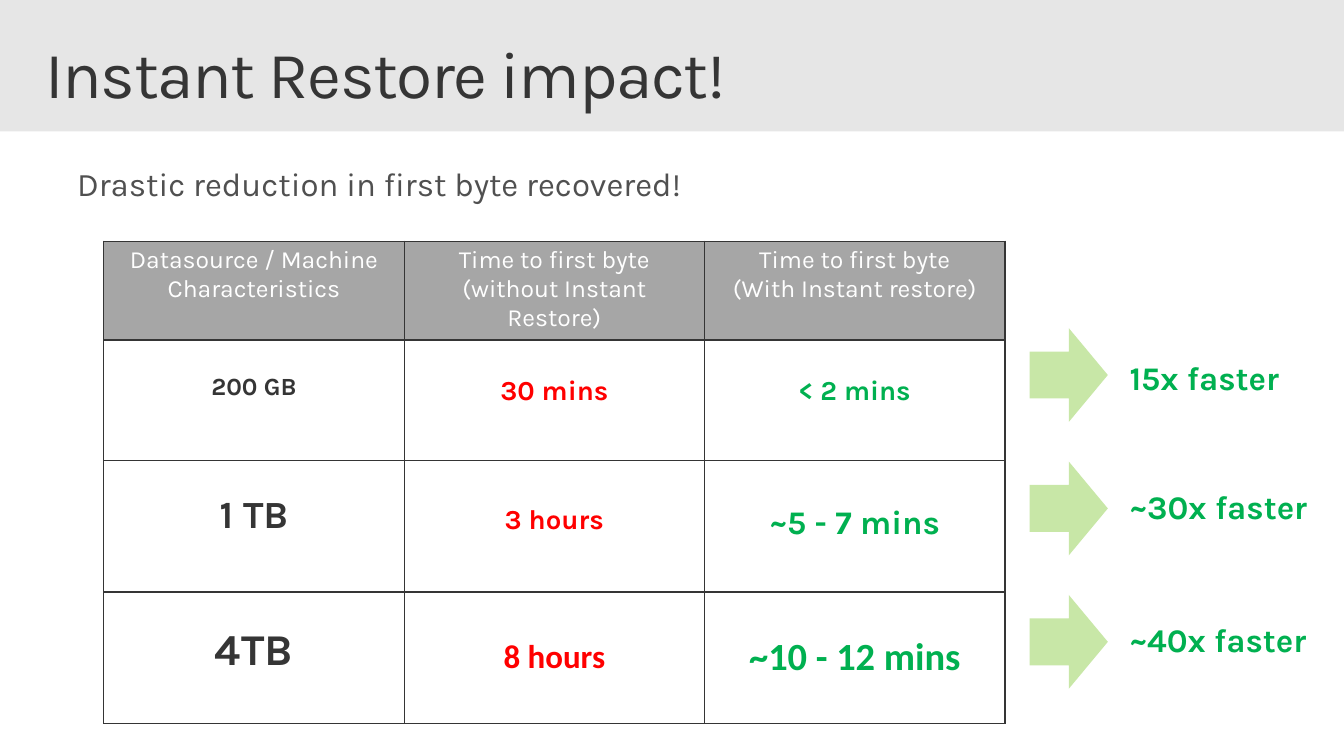
from pptx import Presentation, util as u
from pptx.dml.color import RGBColor
from pptx.enum import shapes, text
from pptx.oxml import parse_xml
from pptx.oxml.ns import nsdecls, qn
from lxml import etree

W, H = 13.6, 7.65
FONT = "Karla"
INK, BODY, WHITE = "353535", "505050", "FFFFFF"
BAND, HEADER = "E6E6E6", "A6A6A6"
RED, GREEN, LIME = "FF0000", "00B050", "92D050"

TABLE_LEFT, TABLE_TOP, COL_W = 1.05, 2.44, 3.04
ROW_HEIGHTS = [1, 1.22, 1.33, 1.33]
HEADINGS = [
    ["Datasource / Machine", "Characteristics"],
    ["Time to first byte", "(without Instant Restore)"],
    ["Time to first byte", "(With Instant restore)"],
]
# Each cell: wording, size, font, lift above the middle of the row
TIMES = [
    [("200 GB", 18, FONT, 0.13), ("30 mins", 20, FONT, 0.09),
     ("< 2 mins", 20, FONT, 0.09)],
    [("1 TB", 28, FONT, 0.11), ("3 hours", 20, FONT, 0.06),
     ("~5 - 7 mins", 24, FONT, 0.03)],
    [("4TB", 32, FONT, 0.07), ("8 hours", 24, "Calibri", 0),
     ("~10 - 12 mins", 28, "Calibri", 0)],
]
COLUMN_COLORS = [INK, RED, GREEN]
ARROW_TOP, ARROW_PITCH = 3.32, 1.35
SPEEDUPS = [("15x faster", 3.5), ("~30x faster", 4.81), ("~40x faster", 6.15)]


def color(hex_code):
    return RGBColor.from_string(hex_code)


def inches(*lengths):
    return [u.Inches(n) for n in lengths]


def write(tf, lines, size=24, fill=INK, font=FONT, bold=False,
          align=text.PP_ALIGN.LEFT, leading=1, spacing=None):
    tf.word_wrap = True
    for i, line in enumerate(lines):
        p = tf.add_paragraph() if i else tf.paragraphs[0]
        p.alignment, p.line_spacing = align, leading
        r = p.add_run()
        r.text = line
        f = r.font
        f.name, f.size, f.bold = font, u.Pt(size), bold
        f.color.rgb = color(fill)
        if spacing is not None:
            r._r.get_or_add_rPr().set("spc", str(spacing))


def add_text(parent, box, line, margins=(0.2, 0.16), **fmt):
    tf = parent.add_textbox(*inches(*box)).text_frame
    tf.margin_left = tf.margin_right = u.Inches(margins[0])
    tf.margin_top = tf.margin_bottom = u.Inches(margins[1])
    write(tf, [line], leading=0.9, **fmt)


def add_block(parent, kind, box, fill, alpha=None):
    sp = parent.add_shape(kind, *inches(*box))
    sp.shadow.inherit = False
    sp.fill.solid()
    sp.fill.fore_color.rgb = color(fill)
    sp.line.fill.background()
    if alpha is not None:
        clr = sp._element.spPr.find(qn("a:solidFill"))[0]
        etree.SubElement(clr, qn("a:alpha")).set("val", str(alpha * 1000))


def style_cell(cell, fill):
    cell.fill.solid()
    cell.fill.fore_color.rgb = color(fill)
    tcPr = cell._tc.get_or_add_tcPr()
    for i, side in enumerate("LRTB"):
        tcPr.insert(i, parse_xml(
            f'<a:ln{side} {nsdecls("a")} w="12700"><a:solidFill>'
            f'<a:srgbClr val="{INK}"/></a:solidFill></a:ln{side}>'))


def add_times_table(slide):
    table = slide.shapes.add_table(
        len(ROW_HEIGHTS), len(HEADINGS),
        *inches(TABLE_LEFT, TABLE_TOP, COL_W * len(HEADINGS), sum(ROW_HEIGHTS))).table
    for row, height in zip(table.rows, ROW_HEIGHTS):
        row.height = u.Inches(height)
    for c, heading in enumerate(HEADINGS):
        table.columns[c].width = u.Inches(COL_W)
        cell = table.cell(0, c)
        style_cell(cell, HEADER)
        write(cell.text_frame, heading, size=18, fill=WHITE,
              align=text.PP_ALIGN.CENTER)
        for r, times in enumerate(TIMES, 1):
            line, size, font, lift = times[c]
            cell = table.cell(r, c)
            style_cell(cell, WHITE)
            cell.vertical_anchor = text.MSO_ANCHOR.MIDDLE
            cell.margin_top, cell.margin_bottom = inches(0, 2 * lift)
            write(cell.text_frame, [line], size=size, font=font, bold=True,
                  fill=COLUMN_COLORS[c], align=text.PP_ALIGN.CENTER)


def add_speedup(slide, row, line, top):
    group = slide.shapes.add_group_shape().shapes
    add_block(group, shapes.MSO_SHAPE.RIGHT_ARROW,
              (10.42, ARROW_TOP + row * ARROW_PITCH, 0.79, 0.95), LIME, alpha=50)
    add_text(group, (11.23, top, 2.37, 0.69), line, fill=GREEN, bold=True)


def main():
    prs = Presentation()
    prs.slide_width, prs.slide_height = inches(W, H)
    slide = prs.slides.add_slide(prs.slide_layouts[6])

    # Grey title band above a white page
    slide.background.fill.solid()
    slide.background.fill.fore_color.rgb = color(BAND)
    add_block(slide.shapes, shapes.MSO_SHAPE.RECTANGLE, (0, 1.33, W, H - 1.33), WHITE)

    # Title and lead line
    add_text(slide.shapes, (0.3, 0.32, 13, 1), "Instant Restore impact!",
             margins=(0.16, 0.1), size=48, spacing=-100)
    add_text(slide.shapes, (0.58, 1.54, 12.72, 0.69),
             "Drastic reduction in first byte recovered!", fill=BODY)

    # Recovery times and the gain for each row
    add_times_table(slide)
    for row, (line, top) in enumerate(SPEEDUPS):
        add_speedup(slide, row, line, top)

    prs.save("out.pptx")


if __name__ == "__main__":
    main()
